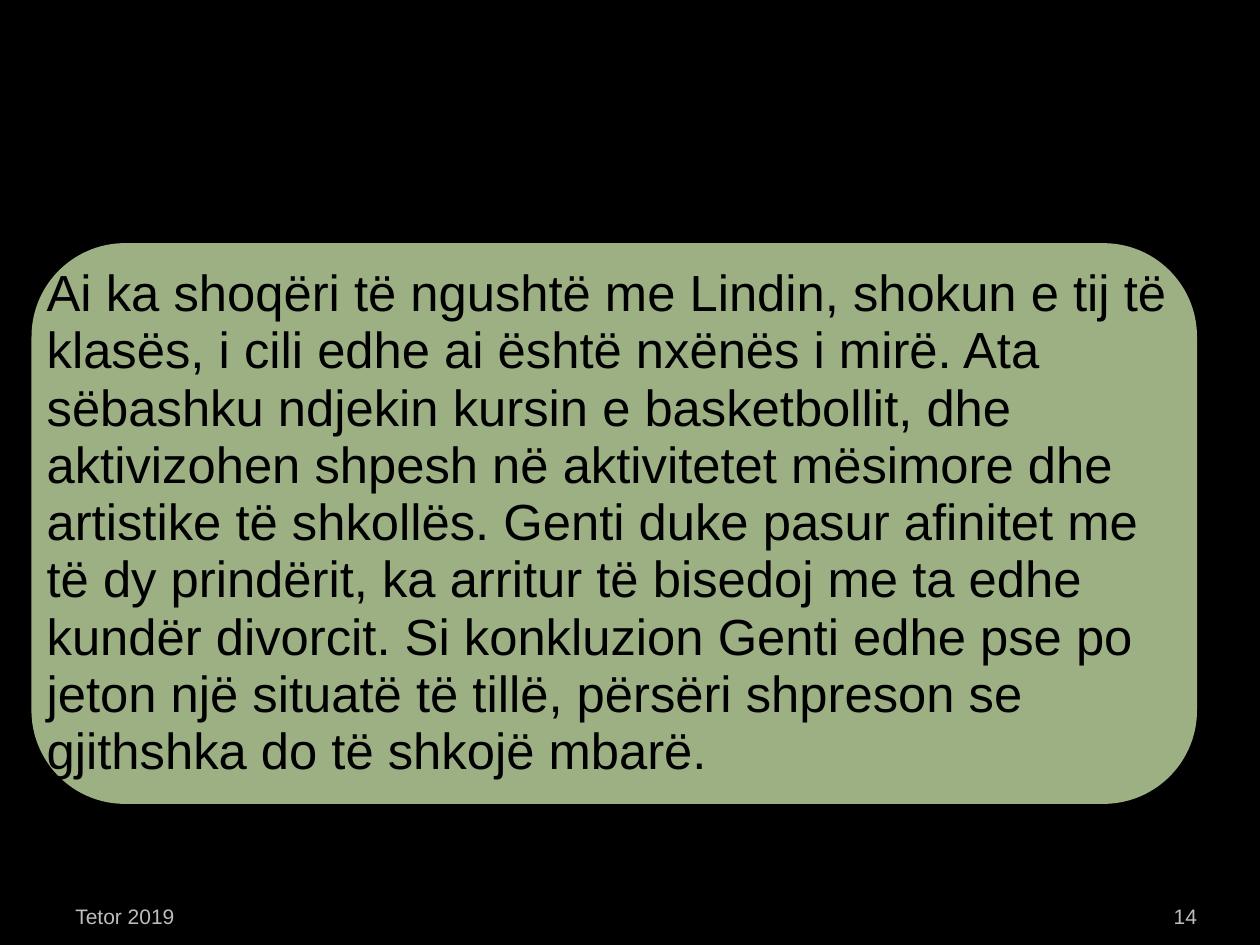
from dataclasses import dataclass

from lxml.etree import SubElement
from pptx import Presentation
from pptx.dml.color import RGBColor
from pptx.enum.shapes import MSO_SHAPE as Shape
from pptx.enum.text import MSO_ANCHOR as Anchor, PP_ALIGN as Align
from pptx.oxml.ns import qn
from pptx.util import Inches, Pt


@dataclass(frozen=True)
class Theme:
    font: str = "Arial"
    background: RGBColor = RGBColor.from_string("000000")
    panel: RGBColor = RGBColor.from_string("9CB084")
    body: RGBColor = RGBColor.from_string("000000")
    footer: RGBColor = RGBColor.from_string("BDBDBD")
    body_size: Pt = Pt(29)
    footer_size: Pt = Pt(12)


theme = Theme()


def add_text(page, text, area, size, color, anchor, align, side, edge):
    box = page.shapes.add_textbox(*area)
    frame = box.text_frame
    frame.word_wrap = True
    frame.vertical_anchor = anchor
    frame.margin_left = frame.margin_right = Inches(side)
    frame.margin_top = frame.margin_bottom = Inches(edge)
    para = frame.paragraphs[0]
    para.text = text
    para.alignment = align
    para.font.name = theme.font
    para.font.size = size
    para.font.color.rgb = color
    return para


deck = Presentation()
deck.slide_width = Inches(10)
deck.slide_height = Inches(7.5)
page = deck.slides.add_slide(deck.slide_layouts[6])
page.background.fill.solid()
page.background.fill.fore_color.rgb = theme.background

footers = [
    ("Tetor 2019", 0.5, 2.33, Align.LEFT, 0.1),
    ("14", 8.67, 0.83, Align.RIGHT, 0),
]
for text, left, width, align, side in footers:
    area = Inches(left), Inches(7.02), Inches(width), Inches(0.4)
    add_text(page, text, area, theme.footer_size, theme.footer,
             Anchor.BOTTOM, align, side, 0.05)

panel_area = Inches(0.25), Inches(1.93), Inches(9.25), Inches(4.45)
panel = page.shapes.add_shape(Shape.ROUNDED_RECTANGLE, *panel_area)
panel.fill.solid()
panel.fill.fore_color.rgb = theme.panel
panel.line.fill.background()
panel.shadow.inherit = False
effects = panel.element.spPr.find(qn("a:effectLst"))
shadow = SubElement(effects, qn("a:outerShdw"), blurRad=str(Pt(7.5)), dist="0", dir="0")
shade = SubElement(shadow, qn("a:srgbClr"), val="000000")
SubElement(shade, qn("a:alpha"), val="50000")

story = (
    "Ai ka shoqëri të ngushtë me Lindin, shokun e tij të klasës, i cili edhe ai "
    "është nxënës i mirë. Ata sëbashku ndjekin kursin e basketbollit, dhe "
    "aktivizohen shpesh në aktivitetet mësimore dhe artistike të shkollës. Genti "
    "duke pasur afinitet me të dy prindërit, ka arritur të bisedoj me ta edhe "
    "kundër divorcit. Si konkluzion Genti edhe pse po jeton një situatë të tillë, "
    "përsëri shpreson se gjithshka do të shkojë mbarë."
)
para = add_text(page, story, panel_area, theme.body_size, theme.body,
                Anchor.MIDDLE, Align.LEFT, 0.12, 0.12)
para.line_spacing = 0.94

deck.save("out.pptx")
